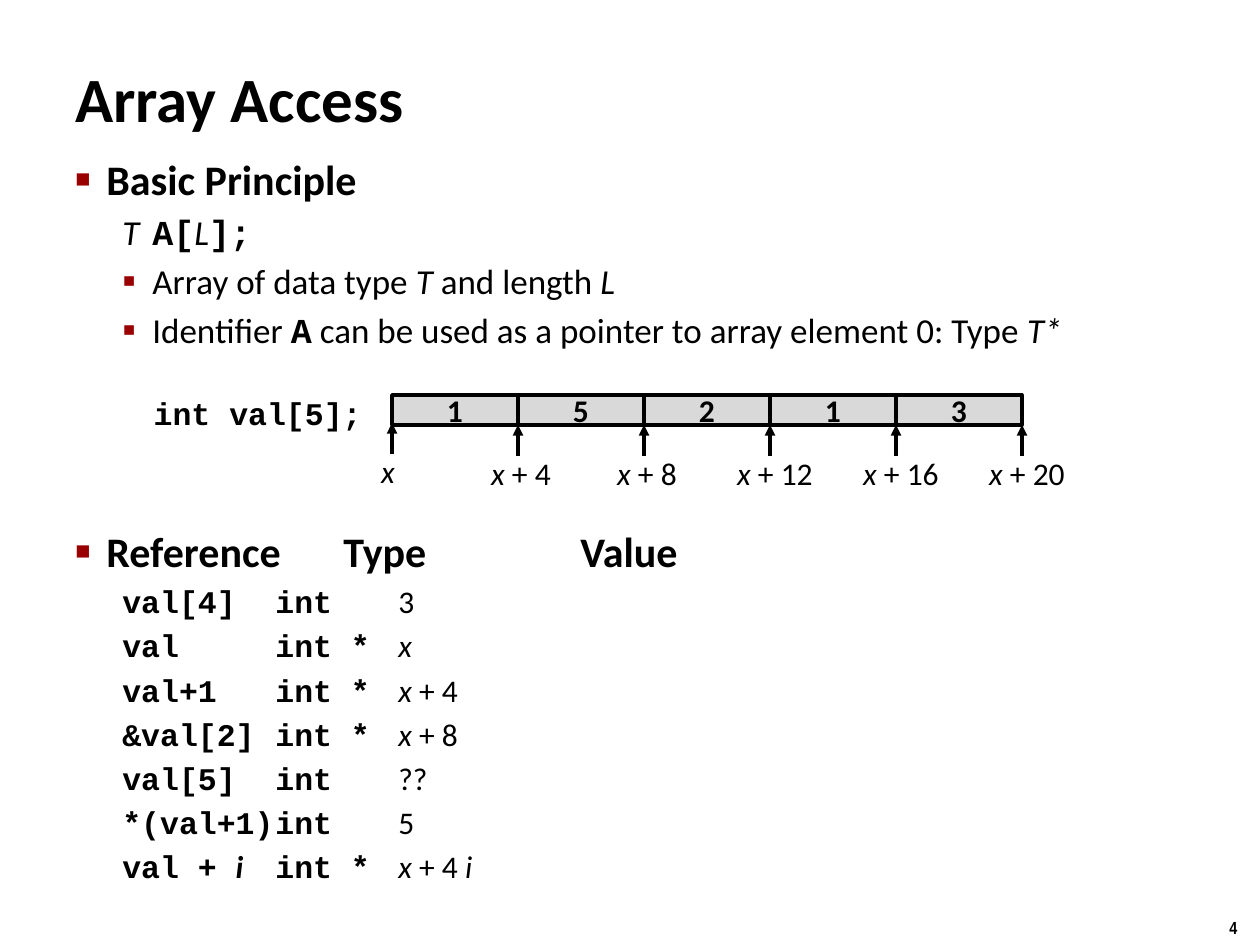
from dataclasses import dataclass

import pptx
import pptx.dml.color
import pptx.enum.shapes
import pptx.enum.text
import pptx.util
from pptx.oxml import parse_xml
from pptx.oxml.ns import nsdecls
from pptx.oxml.xmlchemy import OxmlElement

PX = 914400 / 126
COLORS = {"ink": "000000", "bullet": "990000", "cell": "D9D9D9"}
CODE_FONT, TEXT_FONT, BULLET_FONT = "Courier New", "Calibri", "Arial"
ALIGN = pptx.enum.text.PP_ALIGN
ANCHOR = pptx.enum.text.MSO_ANCHOR
HEADING_TABS = (268, 505)
TAB_STEP = 123
CELL_LEFT, CELL_TOP, CELL_WIDTH, CELL_HEIGHT = 392, 395, 126, 30


@dataclass(frozen=True)
class Span:
    text: str
    bold: bool = False
    italic: bool = False
    font: str = TEXT_FONT


@dataclass(frozen=True)
class Level:
    margin: int
    hanging: int
    size: int
    bullet: str = ""
    bullet_percent: int = 100


@dataclass(frozen=True)
class Line:
    level: Level
    spans: tuple[Span, ...]
    tabs: tuple[int, ...] = ()
    space_before: float | None = None


@dataclass(frozen=True)
class Address:
    left: int
    top: int
    width: int
    spans: tuple[Span, ...]
    arrow_top: int = 425


def emu(pixels: float) -> pptx.util.Emu:
    return pptx.util.Emu(round(pixels * PX))


def color(name: str) -> pptx.dml.color.RGBColor:
    return pptx.dml.color.RGBColor.from_string(COLORS[name])


def plain(text: str) -> Span:
    return Span(text)


def italic(text: str) -> Span:
    return Span(text, italic=True)


def code(text: str) -> Span:
    return Span(text, bold=True, font=CODE_FONT)


def bold(text: str) -> Span:
    return Span(text, bold=True)


def write(paragraph, *spans: Span, size: int, align=ALIGN.LEFT) -> None:
    paragraph.alignment = align
    for span in spans:
        run = paragraph.add_run()
        run.text = span.text
        run.font.name = span.font
        run.font.size = pptx.util.Pt(size)
        run.font.bold = span.bold
        run.font.italic = span.italic
        run.font.color.rgb = color("ink")


def add_text(slide, left: int, top: int, width: int, height: int, *spans: Span,
             size: int = 18, align=ALIGN.LEFT, anchor=ANCHOR.TOP, wrap: bool = True):
    box = slide.shapes.add_textbox(emu(left), emu(top), emu(width), emu(height))
    box.text_frame.word_wrap = wrap
    box.text_frame.vertical_anchor = anchor
    write(box.text_frame.paragraphs[0], *spans, size=size, align=align)
    return box


def format_line(paragraph, line: Line) -> None:
    """Set the indents, bullet and tab stops of an outline line."""
    level = line.level
    before = level.size * 0.2 if line.space_before is None else line.space_before
    paragraph.space_before = pptx.util.Pt(before)
    properties = paragraph._p.get_or_add_pPr()
    properties.set("marL", str(emu(level.margin)))
    properties.set("indent", str(-emu(level.hanging)))
    properties.set("defTabSz", str(emu(TAB_STEP)))
    if level.bullet:
        for xml in (
            f'<a:buClr {nsdecls("a")}><a:srgbClr val="{COLORS["bullet"]}"/></a:buClr>',
            f'<a:buSzPct {nsdecls("a")} val="{level.bullet_percent * 1000}"/>',
            f'<a:buFont {nsdecls("a")} typeface="{BULLET_FONT}"/>',
            f'<a:buChar {nsdecls("a")} char="{level.bullet}"/>',
        ):
            properties.append(parse_xml(xml))
    else:
        properties.append(OxmlElement("a:buNone"))
    if line.tabs:
        tab_list = OxmlElement("a:tabLst")
        for position in line.tabs:
            tab = OxmlElement("a:tab")
            tab.set("pos", str(emu(position)))
            tab.set("algn", "l")
            tab_list.append(tab)
        properties.append(tab_list)


def add_outline(slide, lines: tuple[Line, ...]) -> None:
    box = slide.shapes.add_textbox(emu(63), emu(147), emu(1111), emu(788))
    box.text_frame.word_wrap = True
    for index, line in enumerate(lines):
        paragraph = box.text_frame.add_paragraph() if index else box.text_frame.paragraphs[0]
        write(paragraph, *line.spans, size=line.level.size)
        format_line(paragraph, line)


def add_cell(slide, index: int, value: str) -> None:
    cell = slide.shapes.add_shape(
        pptx.enum.shapes.MSO_SHAPE.RECTANGLE, emu(CELL_LEFT + index * CELL_WIDTH),
        emu(CELL_TOP), emu(CELL_WIDTH), emu(CELL_HEIGHT))
    cell.shadow.inherit = False
    cell.fill.solid()
    cell.fill.fore_color.rgb = color("cell")
    cell.line.color.rgb = color("ink")
    cell.line.width = pptx.util.Pt(2)
    frame = cell.text_frame
    frame.word_wrap = False
    frame.vertical_anchor = ANCHOR.MIDDLE
    frame.margin_top = frame.margin_bottom = 0
    write(frame.paragraphs[0], bold(value), size=18, align=ALIGN.CENTER)


def add_address(slide, index: int, address: Address) -> None:
    """Label a cell boundary and point an arrow up at it."""
    add_text(slide, address.left, address.top, address.width, 50, *address.spans,
             align=ALIGN.CENTER)
    x = emu(CELL_LEFT + index * CELL_WIDTH)
    arrow = slide.shapes.add_connector(
        pptx.enum.shapes.MSO_CONNECTOR.STRAIGHT,
        x, emu(address.arrow_top + 31), x, emu(address.arrow_top))
    arrow.line.color.rgb = color("ink")
    arrow.line.width = pptx.util.Pt(2)
    head = OxmlElement("a:tailEnd")
    head.set("type", "triangle")
    arrow.line._get_or_add_ln().append(head)
    arrow._element.spPr.append(OxmlElement("a:effectLst"))


HEADING = Level(31, 31, 24, "■", 60)
DECLARATION = Level(77, 30, 20)
POINT = Level(77, 30, 20, "▪", 110)
ROW = Level(77, 30, 18)

REFERENCES = (
    (code("val[4]\tint\t"), plain("3")),
    (code("val\tint *\t"), italic("x")),
    (code("val+1\tint *\t"), italic("x"), plain(" + 4")),
    (code("&val[2]\tint *\t"), italic("x"), plain(" + 8")),
    (code("val[5]\tint\t"), plain("??")),
    (code("*(val+1)\tint\t"), plain("5")),
    (code("val + "), Span("i\t", bold=True, italic=True), code("int *\t"),
     italic("x "), plain("+ 4 "), italic("i")),
)
OUTLINE = (
    Line(HEADING, (bold("Basic Principle"),)),
    Line(DECLARATION, (italic("T\t"), code("A["), italic("L"), code("];"))),
    Line(POINT, (plain("Array of data type "), italic("T"), plain(" and length "), italic("L"))),
    Line(POINT, (plain("Identifier "), code("A"),
                 plain(" can be used as a pointer to array element 0: Type "), italic("T*"))),
    Line(HEADING, (bold("Reference\tType\tValue"),), HEADING_TABS, space_before=100),
    *(Line(ROW, spans) for spans in REFERENCES),
)
ADDRESSES = (
    Address(361, 446, 54, (italic("x"),), arrow_top=423),
    *(Address(left, 448, 136, (italic("x "), plain(f"+ {offset}")))
      for left, offset in ((453, 4), (579, 8), (707, 12), (833, 16), (959, 20))),
)


def main() -> None:
    presentation = pptx.Presentation()
    presentation.slide_width, presentation.slide_height = emu(1260), emu(945)
    slide = presentation.slides.add_slide(presentation.slide_layouts[6])
    add_text(slide, 1217, 911, 43, 34, Span("4", bold=True, font="Arial Narrow"),
             size=10, wrap=False)
    add_text(slide, 63, 58, 766, 79, bold("Array Access"), size=36, anchor=ANCHOR.MIDDLE)
    add_outline(slide, OUTLINE)
    add_text(slide, 140, 388, 234, 50, code("int val[5];"), align=ALIGN.RIGHT)
    for index, value in enumerate("15213"):
        add_cell(slide, index, value)
    for index, address in enumerate(ADDRESSES):
        add_address(slide, index, address)
    presentation.save("out.pptx")


if __name__ == "__main__":
    main()
